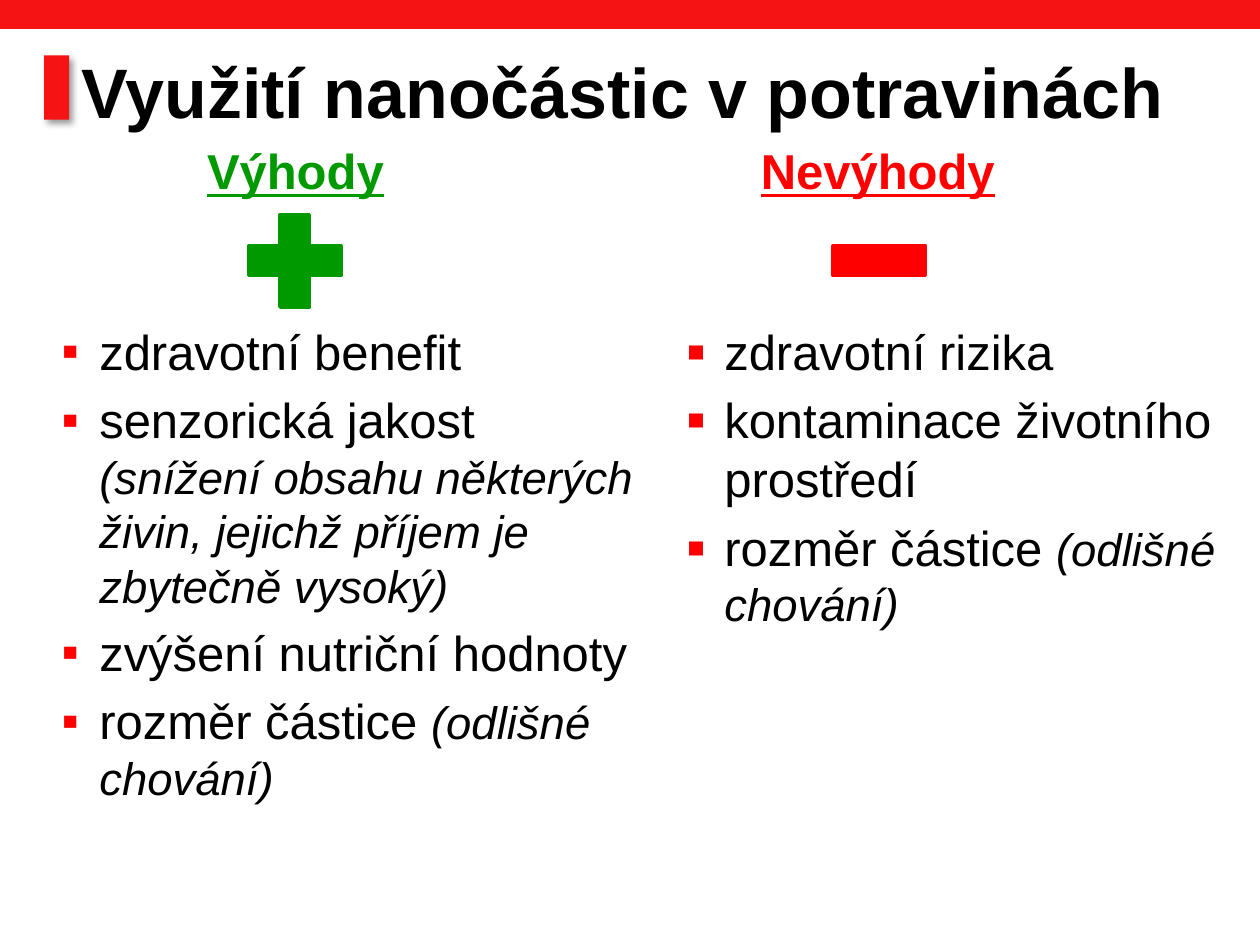
"""Build a slide weighing the pros and cons of nanoparticles in food."""
from lxml.etree import SubElement
from pptx import Presentation
from pptx.dml.color import RGBColor
from pptx.enum.shapes import MSO_SHAPE
from pptx.enum.text import MSO_ANCHOR, PP_ALIGN
from pptx.oxml.ns import qn
from pptx.util import Inches, Pt

BLACK = RGBColor(0x00, 0x00, 0x00)
BRAND_RED = RGBColor(0xF5, 0x13, 0x13)
RED = RGBColor(0xFF, 0x00, 0x00)
GREEN = RGBColor(0x00, 0x99, 0x00)
FONT = "Arial"
INDENT = Inches(0.3)
HEADING_TOP, SIGN_TOP, LIST_TOP = 1.07, 1.57, 2.5
SIGN_SIZE = 1

TITLE = "Využití nanočástic v potravinách"
COLUMNS = [
    {
        "heading": "Výhody", "color": GREEN, "align": PP_ALIGN.CENTER,
        "heading_left": 1.41, "heading_width": 1.87,
        "sign": MSO_SHAPE.MATH_PLUS, "sign_left": 1.84,
        "list_box": (0.39, LIST_TOP, 4.84, 4.22), "bullet_percent": 100,
        "items": [
            ("zdravotní benefit", ""),
            ("senzorická jakost ",
             "(snížení obsahu některých živin, jejichž příjem je zbytečně vysoký)"),
            ("zvýšení nutriční hodnoty", ""),
            ("rozměr částice ", "(odlišné chování)"),
        ],
    },
    {
        "heading": "Nevýhody", "color": RED, "align": PP_ALIGN.LEFT,
        "heading_left": 5.94, "heading_width": 2.17,
        "sign": MSO_SHAPE.MATH_MINUS, "sign_left": 6.48,
        "list_box": (5.35, LIST_TOP, 4.61, 2.73), "bullet_percent": 115,
        "items": [
            ("zdravotní rizika", ""),
            ("kontaminace životního prostředí", ""),
            ("rozměr částice ", "(odlišné chování)"),
        ],
    },
]


def add_filled(page, kind, bounds, color, line_width=None):
    shape = page.shapes.add_shape(kind, *map(Inches, bounds))
    shape.shadow.inherit = False
    shape.fill.solid()
    shape.fill.fore_color.rgb = color
    if line_width:
        shape.line.color.rgb = color
        shape.line.width = Pt(line_width)
    else:
        shape.line.fill.background()
    return shape


def add_shadow(shape):
    effects = shape._element.spPr.find(qn("a:effectLst"))
    shadow = SubElement(effects, qn("a:outerShdw"), blurRad=str(Pt(4)),
                        dist=str(Pt(3)), dir="2700000", rotWithShape="0")
    color = SubElement(shadow, qn("a:srgbClr"), val=str(BLACK))
    SubElement(color, qn("a:alpha"), val="40000")


def add_text_frame(page, bounds):
    frame = page.shapes.add_textbox(*map(Inches, bounds)).text_frame
    frame.word_wrap = True
    return frame


def add_span(para, text, size, color=BLACK, **styles):
    span = para.add_run()
    span.text = text
    span.font.name = FONT
    span.font.size = Pt(size)
    span.font.color.rgb = color
    for style, value in styles.items():
        setattr(span.font, style, value)


def add_bullet(para, percent):
    properties = para._p.get_or_add_pPr()
    properties.set("marL", str(INDENT))
    properties.set("indent", str(-INDENT))
    color = SubElement(properties, qn("a:buClr"))
    SubElement(color, qn("a:srgbClr"), val=str(RED))
    SubElement(properties, qn("a:buSzPct"), val=str(percent * 1000))
    SubElement(properties, qn("a:buFont"), typeface=FONT)
    SubElement(properties, qn("a:buChar"), char="▪")


def add_list(page, bounds, items, bullet_percent):
    frame = add_text_frame(page, bounds)
    for index, (text, remark) in enumerate(items):
        para = frame.add_paragraph() if index else frame.paragraphs[0]
        add_bullet(para, bullet_percent)
        if index:
            para.space_before = Pt(5.6)
        add_span(para, text, 28)
        if remark:
            add_span(para, remark, 26, italic=True)


def add_column(page, column):
    bounds = (column["heading_left"], HEADING_TOP, column["heading_width"], 0.57)
    para = add_text_frame(page, bounds).paragraphs[0]
    para.alignment = column["align"]
    add_span(para, column["heading"], 28, column["color"], bold=True, underline=True)
    add_list(page, column["list_box"], column["items"], column["bullet_percent"])
    sign_bounds = (column["sign_left"], SIGN_TOP, SIGN_SIZE, SIGN_SIZE)
    add_filled(page, column["sign"], sign_bounds, column["color"], 2)


def main():
    deck = Presentation()
    deck.slide_width, deck.slide_height = Inches(10), Inches(7.5)
    page = deck.slides.add_slide(deck.slide_layouts[6])
    add_shadow(add_filled(page, MSO_SHAPE.RECTANGLE, (0.35, 0.44, 0.2, 0.51), BRAND_RED))
    add_filled(page, MSO_SHAPE.RECTANGLE, (0, 0, 10, 0.23), BRAND_RED)
    title = add_text_frame(page, (0.55, 0.33, 9.1, 0.77))
    title.vertical_anchor = MSO_ANCHOR.MIDDLE
    add_span(title.paragraphs[0], TITLE, 40, bold=True)
    for column in COLUMNS:
        add_column(page, column)
    deck.save("out.pptx")


if __name__ == "__main__":
    main()
